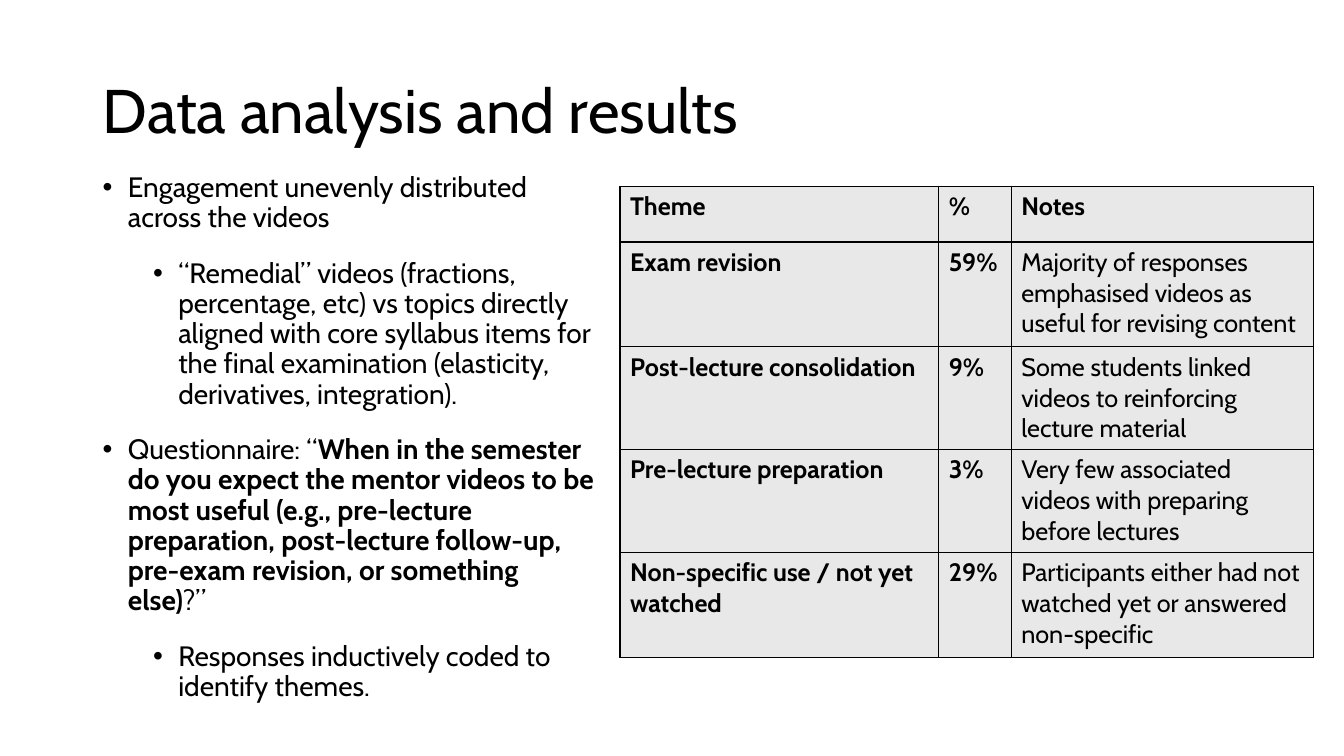
from lxml import etree
from pptx import Presentation
from pptx.dml.color import RGBColor
from pptx.enum.text import MSO_ANCHOR, PP_ALIGN
from pptx.oxml.ns import qn
from pptx.util import Inches, Pt

TOP, MIDDLE = MSO_ANCHOR.TOP, MSO_ANCHOR.MIDDLE
LEFT = PP_ALIGN.LEFT
FONT = "Cabin"
INK, GREY = "000000", "E8E8E8"

# Each point: level, then (text, bold) runs
POINTS = [
    (0, [("Engagement unevenly distributed across the videos", False)]),
    (1, [("“Remedial” videos (fractions, percentage, etc) vs topics directly "
          "aligned with core syllabus items for the final examination "
          "(elasticity, derivatives, integration).", False)]),
    (0, [("Questionnaire: “", False),
         ("When in the semester do you expect the mentor videos to be most "
          "useful (e.g., pre-lecture preparation, post-lecture follow-up, "
          "pre-exam revision, or something else)", True),
         ("?”", False)]),
    (1, [("Responses inductively coded to identify themes.", False)]),
]
ROWS = [
    ("Theme", "%", "Notes"),
    ("Exam revision", "59%",
     "Majority of responses emphasised videos as useful for revising content"),
    ("Post-lecture consolidation", "9%",
     "Some students linked videos to reinforcing lecture material"),
    ("Pre-lecture preparation", "3%",
     "Very few associated videos with preparing before lectures"),
    ("Non-specific use / not yet watched", "29%",
     "Participants either had not watched yet or answered non-specific"),
]
WIDTHS = [3.16, 0.72, 3]
HEIGHTS = [0.55, 1.04, 1.02, 1.02, 1.04]


def color(code):
    return RGBColor.from_string(code)


def add_run(para, text, size, bold=False):
    run = para.add_run()
    run.text = text
    font = run.font
    font.name, font.size, font.bold = FONT, Pt(size), bold
    font.color.rgb = color(INK)


def place(shape, box):
    shape.left, shape.top, shape.width, shape.height = map(Inches, box)


def add_bullet(para, level):
    props = para._p.get_or_add_pPr()
    props.set("marL", str(Inches(0.25 + 0.5 * level)))
    props.set("indent", str(Inches(-0.25)))
    etree.SubElement(props, qn("a:buFont")).set("typeface", "Arial")
    etree.SubElement(props, qn("a:buChar")).set("char", "•")


def add_border(cell):
    props = cell._tc.get_or_add_tcPr()
    for spot, side in enumerate(("lnL", "lnR", "lnT", "lnB")):
        line = etree.Element(qn("a:" + side), w=str(Pt(1)))
        fill = etree.SubElement(line, qn("a:solidFill"))
        etree.SubElement(fill, qn("a:srgbClr")).set("val", INK)
        props.insert(spot, line)


def add_title(slide, box):
    title = slide.shapes.title
    place(title, box)
    frame = title.text_frame
    frame.vertical_anchor = MIDDLE
    para = frame.paragraphs[0]
    para.alignment, para.line_spacing = LEFT, 0.9
    add_run(para, "Data analysis and results", 44)


def add_points(slide, box):
    frame = slide.shapes.add_textbox(*map(Inches, box)).text_frame
    frame.word_wrap = True
    for i, (level, runs) in enumerate(POINTS):
        para = frame.add_paragraph() if i else frame.paragraphs[0]
        para.level, para.line_spacing = level, 0.9
        para.space_before, para.space_after = Pt(6), Pt(12)
        add_bullet(para, level)
        for text, bold in runs:
            add_run(para, text, 20, bold)


def add_themes(slide, left, top):
    box = left, top, sum(WIDTHS), sum(HEIGHTS)
    table = slide.shapes.add_table(
        len(ROWS), len(WIDTHS), *map(Inches, box)).table
    for col, width in zip(table.columns, WIDTHS):
        col.width = Inches(width)
    for r, texts in enumerate(ROWS):
        table.rows[r].height = Inches(HEIGHTS[r])
        for c, text in enumerate(texts):
            cell = table.cell(r, c)
            cell.fill.solid()
            cell.fill.fore_color.rgb = color(GREY)
            cell.vertical_anchor = MIDDLE if (r, c) == (2, 2) else TOP
            add_border(cell)
            # Header and first two columns are bold
            add_run(cell.text_frame.paragraphs[0], text, 18, r == 0 or c < 2)


def main():
    deck = Presentation()
    deck.slide_width, deck.slide_height = Inches(13.33), Inches(7.5)
    slide = deck.slides.add_slide(deck.slide_layouts[5])
    add_title(slide, (0.92, 0.4, 11.5, 1.45))
    add_points(slide, (0.92, 1.67, 5.1, 5.58))
    add_themes(slide, 6.15, 1.85)
    deck.save("out.pptx")


if __name__ == "__main__":
    main()
